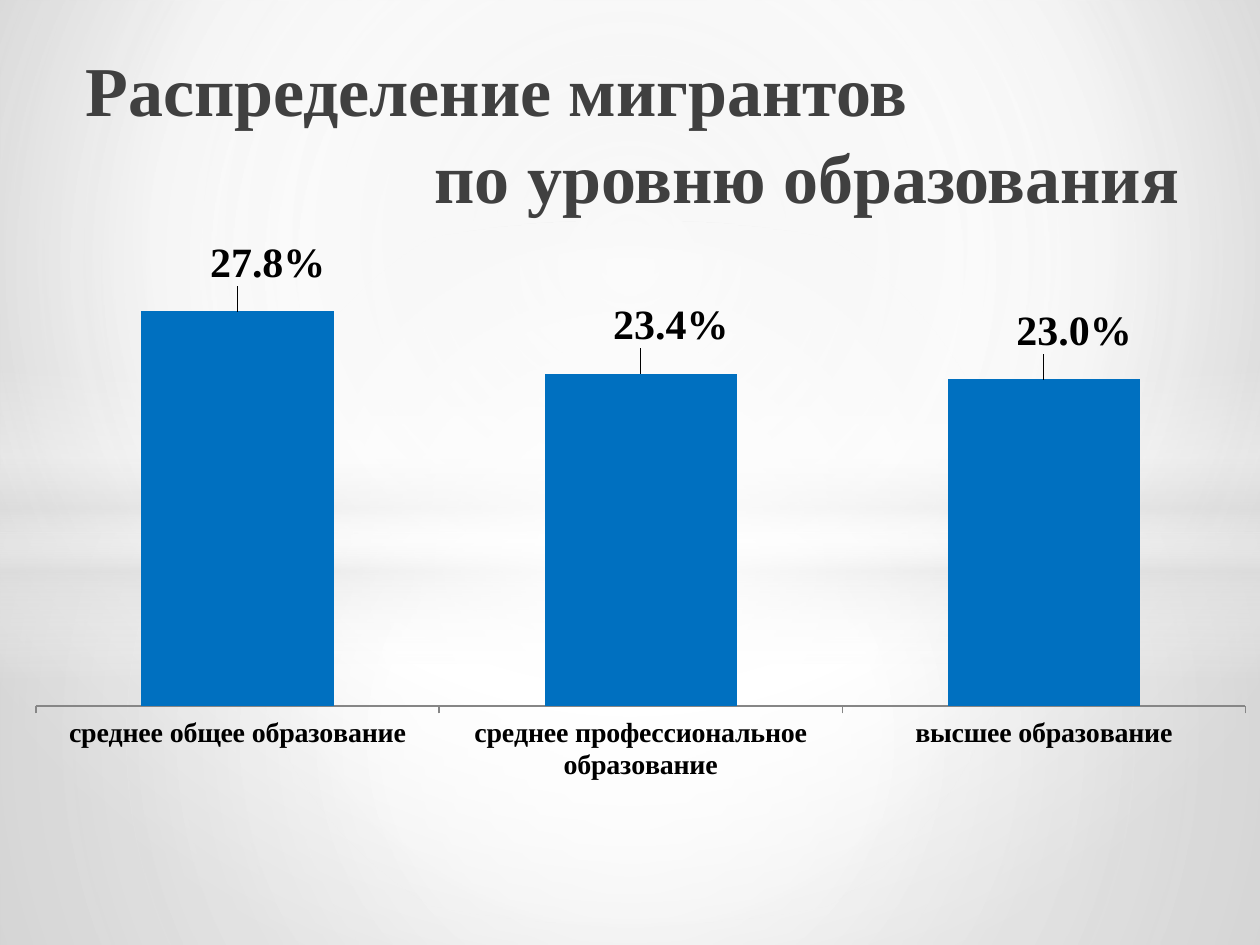
from lxml import etree
from pptx import Presentation
from pptx.chart import data
from pptx.dml.color import RGBColor
from pptx.enum import chart as charts, shapes, text
from pptx.oxml import ns, parse_xml
from pptx.util import Inches, Pt

FONT = "Times New Roman"
COLORS = {"title": "404040", "text": "000000", "bar": "0070C0", "axis": "868686",
          "white": "FFFFFF", "shade": "DEDEDE", "core": "D5D5D5", "edge": "B2B2B2"}
CENTER = (50, 50, 50, 50)
TITLE_LINES = [("Распределение мигрантов", 0.2), ("по уровню образования", 2.97)]
EDUCATION = [("среднее общее образование", 0.278),
             ("среднее профессиональное образование", 0.234),
             ("высшее образование", 0.23)]
BACKDROP = [
    (shapes.MSO_SHAPE.RECTANGLE, (0, 4.23, 10, 3.27), CENTER,
     [(0, "white", 91), (37, "white", 76), (100, "shade", 79)]),
    (shapes.MSO_SHAPE.RECTANGLE, (0, 0, 10, 4.23), CENTER,
     [(0, "white", 89), (48, "white", 62), (100, "shade", 79)]),
    (shapes.MSO_SHAPE.RECTANGLE, (0, 2.9, 10, 2.5), None,
     [(0, "white", 0), (29, "white", 30), (45, "shade", 40),
      (55, "white", 26), (65, "shade", 60), (100, "white", 0)]),
    (shapes.MSO_SHAPE.OVAL, (0, 1.75, 10, 5.58), CENTER,
     [(0, "white", 100), (54, "white", 0)]),
]


def color(name):
    """Return the named colour."""
    return RGBColor.from_string(COLORS[name])


def add_part(parent, tag, **attributes):
    """Append a namespaced XML element and return it."""
    part = etree.SubElement(parent, ns.qn(tag))
    for name, value in attributes.items():
        part.set(name, str(value))
    return part


def set_gradient(properties, stops, focus=None):
    """Replace a solid fill by a circular gradient, or a vertical one without focus."""
    gradient = parse_xml(f'<a:gradFill {ns.nsdecls("a")} rotWithShape="1"/>')
    stop_list = add_part(gradient, "a:gsLst")
    for position, name, opacity in stops:
        stop = add_part(stop_list, "a:gs", pos=position * 1000)
        shade = add_part(stop, "a:srgbClr", val=COLORS[name])
        if opacity < 100:
            add_part(shade, "a:alpha", val=opacity * 1000)
    if focus:
        circle = add_part(gradient, "a:path", path="circle")
        sides = {side: share * 1000 for side, share in zip("ltrb", focus)}
        add_part(circle, "a:fillToRect", **sides)
    else:
        add_part(gradient, "a:lin", ang=5400000, scaled=0)
    properties.replace(properties.find(ns.qn("a:solidFill")), gradient)


def add_backdrop(slide):
    """Paint the background and its translucent light layers."""
    slide.background.fill.solid()
    slide.background.fill.fore_color.rgb = color("white")
    set_gradient(slide.element.find(".//" + ns.qn("p:bgPr")),
                 [(0, "core", 100), (60, "white", 100), (100, "edge", 100)],
                 (20, 10, 20, 60))
    for preset, box, focus, stops in BACKDROP:
        layer = slide.shapes.add_shape(preset, *map(Inches, box))
        layer.shadow.inherit = False
        layer.line.fill.background()
        layer.fill.solid()
        layer.fill.fore_color.rgb = color("white")
        set_gradient(layer.element.spPr, stops, focus)


def add_title(slide, box):
    """Write the two title lines, each with its own indent."""
    frame = slide.shapes.add_textbox(*map(Inches, box)).text_frame
    frame.word_wrap = True
    frame.vertical_anchor = text.MSO_ANCHOR.TOP
    for index, (line, indent) in enumerate(TITLE_LINES):
        paragraph = frame.add_paragraph() if index else frame.paragraphs[0]
        paragraph.text = line
        paragraph.line_spacing = 1.04
        paragraph.font.name = FONT
        paragraph.font.size = Pt(40)
        paragraph.font.bold = True
        paragraph.font.color.rgb = color("title")
        paragraph._p.get_or_add_pPr().set("marL", str(Inches(indent)))


def set_layout(parent, position, **values):
    """Insert a manual chart layout at the given child position."""
    layout = parse_xml(f'<c:layout {ns.nsdecls("c")}/>')
    manual = add_part(layout, "c:manualLayout")
    for name, value in values.items():
        add_part(manual, f"c:{name}", val=value)
    parent.insert(position, layout)


def style_font(font, size):
    """Apply the bold chart font."""
    font.name = FONT
    font.size = Pt(size)
    font.bold = True
    font.color.rgb = color("text")


def add_education_chart(slide, box):
    """Draw the share of migrants at each level of education."""
    chart_data = data.CategoryChartData(number_format="0.0%")
    chart_data.categories = [level for level, share in EDUCATION]
    chart_data.add_series("Series 1", [share for level, share in EDUCATION])
    chart = slide.shapes.add_chart(charts.XL_CHART_TYPE.COLUMN_CLUSTERED,
                                   *map(Inches, box), chart_data).chart
    chart.has_legend = False
    chart.has_title = False
    style_font(chart.font, 18)

    value_axis = chart.value_axis
    value_axis.minimum_scale, value_axis.maximum_scale = 0, 0.3
    value_axis.has_major_gridlines = False
    value_axis.visible = False
    category_axis = chart.category_axis
    category_axis.major_tick_mark = charts.XL_TICK_MARK.OUTSIDE
    category_axis.format.line.color.rgb = color("axis")
    style_font(category_axis.tick_labels.font, 16)

    plot = chart.plots[0]
    plot.gap_width = 110
    plot.vary_by_categories = False
    series = plot.series[0]
    series.format.fill.solid()
    series.format.fill.fore_color.rgb = color("bar")
    labels = series.data_labels
    labels.show_value = True
    labels.number_format = "0.0%"
    labels.number_format_is_linked = False
    labels.position = charts.XL_LABEL_POSITION.OUTSIDE_END
    style_font(labels.font, 24)
    for index in range(len(EDUCATION)):
        label = series.points[index].data_label
        style_font(label.font, 24)
        label.position = charts.XL_LABEL_POSITION.OUTSIDE_END
    for label in chart.element.iter(ns.qn("c:dLbl")):
        set_layout(label, 1, x=0.025, y=-0.03)

    plot_area = chart.element.find(".//" + ns.qn("c:plotArea"))
    for layout in plot_area.findall(ns.qn("c:layout")):
        plot_area.remove(layout)
    set_layout(plot_area, 0, layoutTarget="inner", xMode="edge", yMode="edge",
               x=0, y=0.053, w=1, h=0.642)


def main():
    """Build and save the slide."""
    presentation = Presentation()
    presentation.slide_width, presentation.slide_height = Inches(10), Inches(7.5)
    slide = presentation.slides.add_slide(presentation.slide_layouts[6])
    add_backdrop(slide)
    add_title(slide, (0.38, 0.29, 9.29, 1.5))
    add_education_chart(slide, (0.28, 1.9, 9.61, 5.31))
    presentation.save("out.pptx")


if __name__ == "__main__":
    main()
